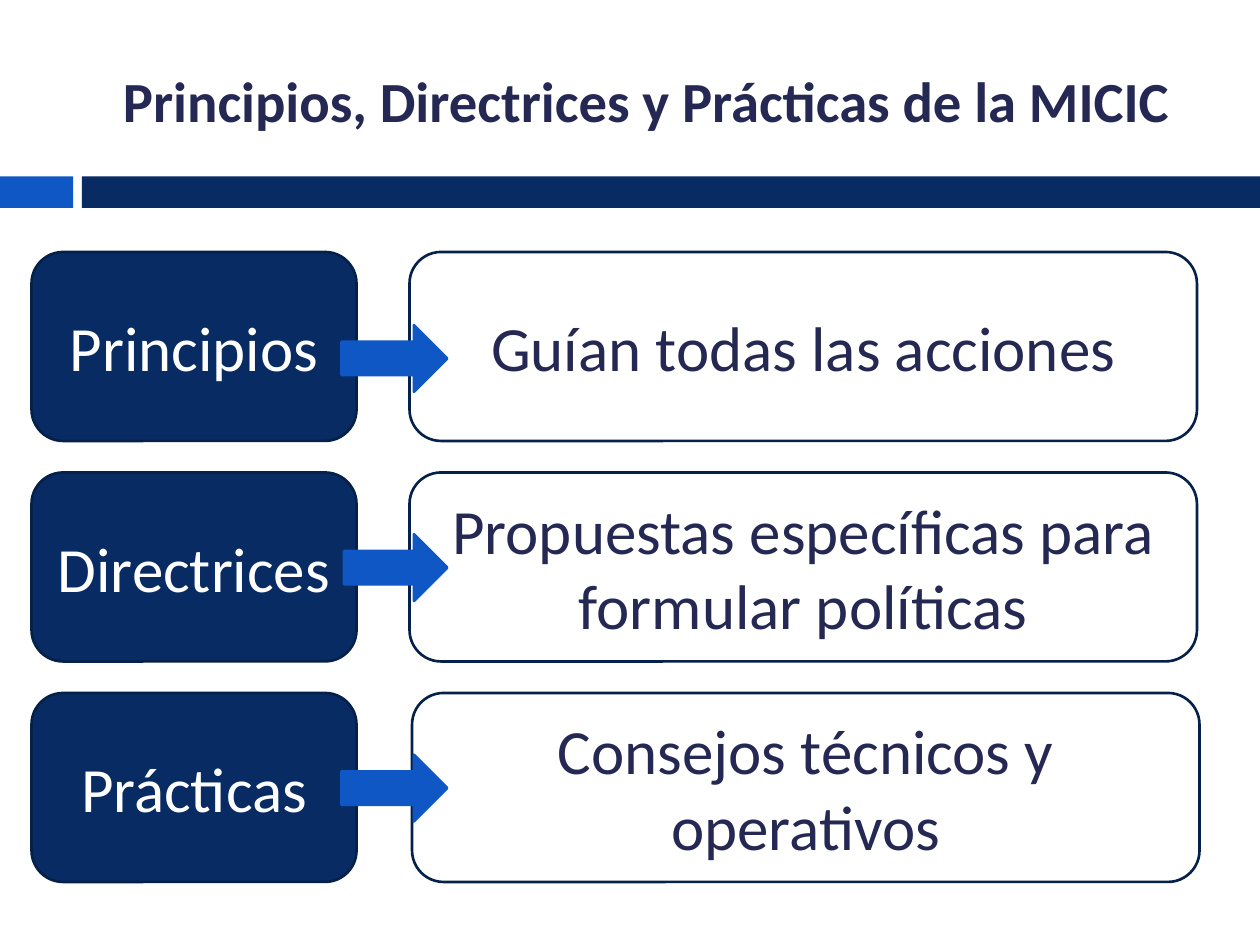
from dataclasses import dataclass

from pptx import Presentation
from pptx.dml.color import RGBColor
from pptx.enum.shapes import MSO_SHAPE as Shape
from pptx.enum.text import MSO_ANCHOR as Anchor, PP_ALIGN as Align
from pptx.util import Pt

COLORS = {
    "navy": "072B62",
    "outline": "052049",
    "blue": "0E57C4",
    "ink": "242852",
    "white": "FFFFFF",
}
FONT = "Calibri"
ROW_TOP, ROW_STEP, ROW_HEIGHT = 144, 126, 108
TERM_LEFT, TERM_WIDTH = 18, 185.76
MEANING_WIDTH = 450
ARROW_TIP, ARROW_HEIGHT = 255.6, 38.16


@dataclass
class Box:
    left: float
    top: float
    width: float
    height: float

    def lengths(self) -> list:
        return [Pt(n) for n in (self.left, self.top, self.width, self.height)]


@dataclass
class Row:
    term: str
    meaning: str
    meaning_left: float
    arrow_left: float
    arrow_top: float


ROWS = [
    Row("Principios", "Guían todas las acciones", 234, 195.12, 185.76),
    Row("Directrices", "Propuestas específicas para formular políticas",
        234, 196.56, 305.28),
    Row("Prácticas", "Consejos técnicos y operativos", 235.44, 195.12, 431.28),
]


def rgb(name: str) -> RGBColor:
    return RGBColor.from_string(COLORS[name])


def write(shape, text: str, size: float, color: str, bold: bool = False) -> None:
    frame = shape.text_frame
    frame.word_wrap = True
    frame.vertical_anchor = Anchor.MIDDLE
    frame.text = text
    paragraph = frame.paragraphs[0]
    paragraph.alignment = Align.CENTER
    font = paragraph.runs[0].font
    font.name, font.size, font.bold = FONT, Pt(size), bold
    font.color.rgb = rgb(color)


def add_block(slide, kind: Shape, box: Box, fill: str, outline: str | None = None):
    block = slide.shapes.add_shape(kind, *box.lengths())
    block.shadow.inherit = False
    block.fill.solid()
    block.fill.fore_color.rgb = rgb(fill)
    if outline:
        block.line.color.rgb = rgb(outline)
        block.line.width = Pt(1.5)
    else:
        block.line.fill.background()
    return block


def add_header(slide) -> None:
    add_block(slide, Shape.RECTANGLE, Box(0, 100.8, 41.76, 18), "blue")
    add_block(slide, Shape.RECTANGLE, Box(46.8, 100.8, 673.2, 18), "navy")
    title = slide.shapes.add_textbox(*Box(48.24, 18, 642.24, 77.76).lengths())
    write(title, "Principios, Directrices y Prácticas de la MICIC", 32.4, "ink", True)


def add_row(slide, row: Row, top: float) -> None:
    term = add_block(slide, Shape.ROUNDED_RECTANGLE,
                     Box(TERM_LEFT, top, TERM_WIDTH, ROW_HEIGHT), "navy", "outline")
    write(term, row.term, 36, "white")
    meaning = add_block(slide, Shape.ROUNDED_RECTANGLE,
                        Box(row.meaning_left, top, MEANING_WIDTH, ROW_HEIGHT),
                        "white", "outline")
    write(meaning, row.meaning, 36, "ink")
    arrow_width = ARROW_TIP - row.arrow_left
    add_block(slide, Shape.RIGHT_ARROW,
              Box(row.arrow_left, row.arrow_top, arrow_width, ARROW_HEIGHT),
              "blue", "blue")


def main() -> None:
    deck = Presentation()
    deck.slide_width, deck.slide_height = Pt(720), Pt(540)
    slide = deck.slides.add_slide(deck.slide_layouts[6])
    add_header(slide)
    for index, row in enumerate(ROWS):
        add_row(slide, row, ROW_TOP + index * ROW_STEP)
    deck.save("out.pptx")


if __name__ == "__main__":
    main()
